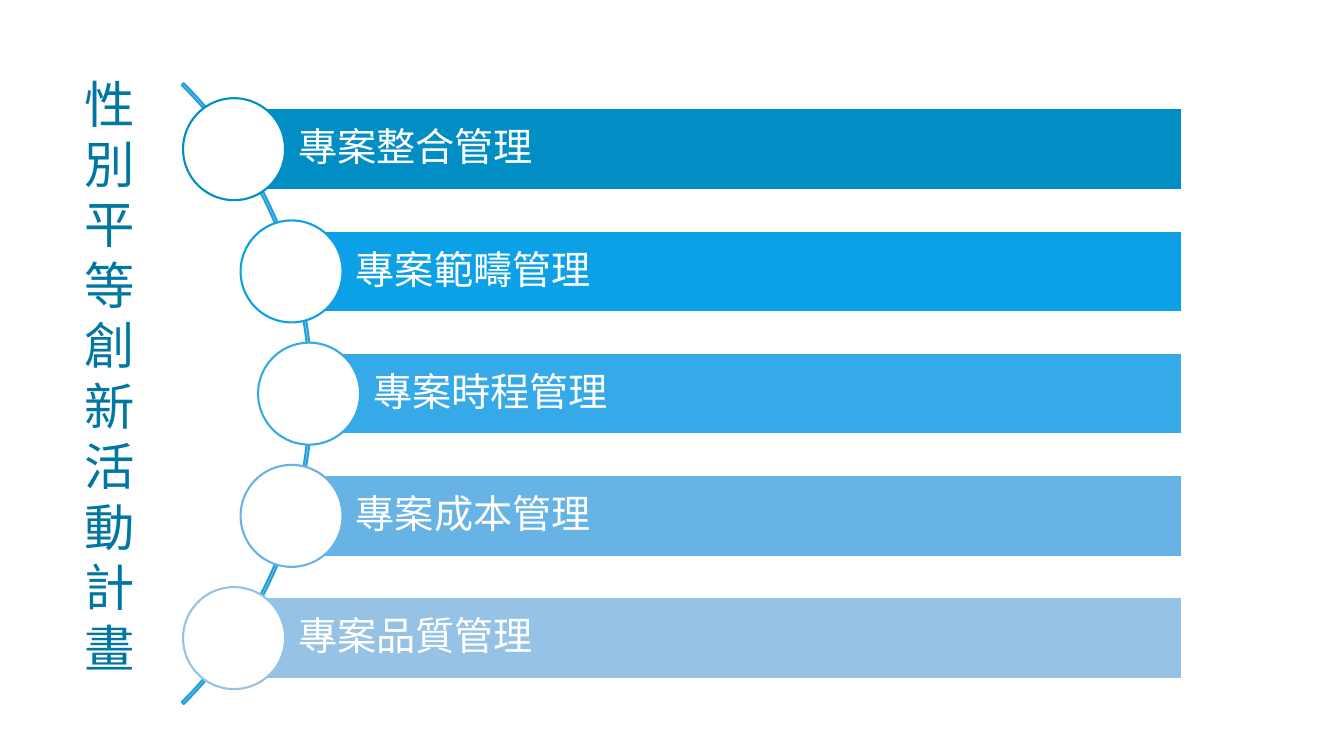
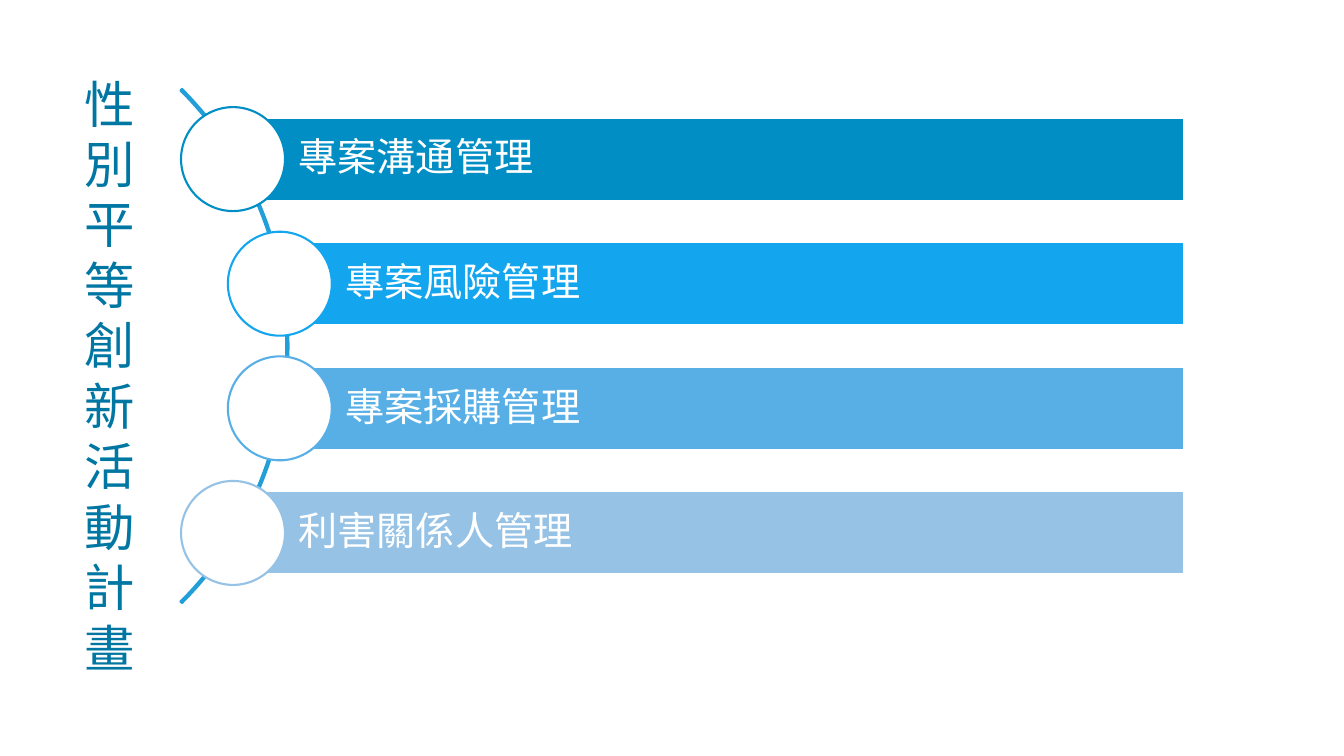
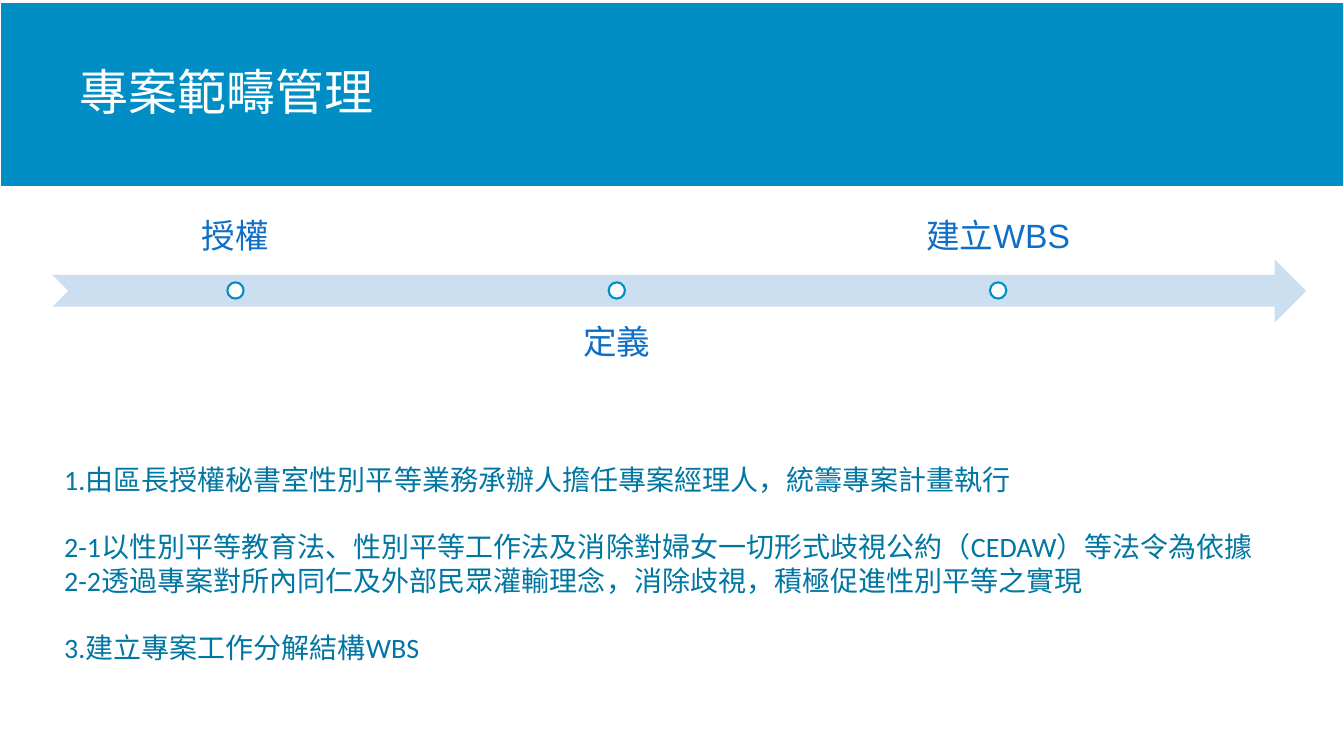
from math import sqrt

from lxml.etree import SubElement
from pptx import Presentation
from pptx.dml.color import RGBColor
from pptx.enum.shapes import MSO_SHAPE as Kind
from pptx.enum.text import MSO_ANCHOR as Anchor, MSO_AUTO_SIZE as Fit, PP_ALIGN as Align
from pptx.oxml.ns import qn
from pptx.util import Cm, Pt

WHITE = RGBColor(0xFF, 0xFF, 0xFF)
BLUE = RGBColor(0x00, 0x8E, 0xC5)
DEEP = RGBColor(0x00, 0x76, 0xA3)
CURVE = RGBColor(0x22, 0x9E, 0xD9)
PALE = RGBColor(0xCC, 0xDF, 0xF1)
LABEL = RGBColor(0x0F, 0x6F, 0xC6)
LAST = RGBColor(0x95, 0xC2, 0xE5)

PLAN = "性別平等創新活動計畫"
# Lengths in cm; hub is the centre of the curve.
LISTS = [
    dict(
        hub=(-3.19, 9.92), radius=11.06, pitch=3.08, dot=2.57, right=29.78,
        rows=[
            ("專案整合管理", BLUE),
            ("專案範疇管理", RGBColor(0x0C, 0xA1, 0xE7)),
            ("專案時程管理", RGBColor(0x36, 0xA9, 0xE9)),
            ("專案成本管理", RGBColor(0x68, 0xB3, 0xE5)),
            ("專案品質管理", LAST),
        ],
    ),
    dict(
        hub=(-1.89, 8.72), radius=9.16, pitch=3.14, dot=2.62, right=29.83,
        rows=[
            ("專案溝通管理", BLUE),
            ("專案風險管理", RGBColor(0x13, 0xA6, 0xEF)),
            ("專案採購管理", RGBColor(0x58, 0xAF, 0xE6)),
            ("利害關係人管理", LAST),
        ],
    ),
]
SCOPE = "專案範疇管理"
STEPS = ["授權", "定義", "建立WBS"]
# Text and space before it in points
NOTES = [
    ("1.由區長授權秘書室性別平等業務承辦人擔任專案經理人，統籌專案計畫執行", 0),
    ("2-1以性別平等教育法、性別平等工作法及消除對婦女一切形式歧視公約（CEDAW）等法令為依據", 24),
    ("2-2透過專案對所內同仁及外部民眾灌輸理念，消除歧視，積極促進性別平等之實現", 0),
    ("3.建立專案工作分解結構WBS", 24),
]


def write(shape, rows, size, color, font="Karla", align=Align.LEFT,
          anchor=Anchor.TOP, pads=(0.25, 0.13, 0.25, 0.13), lead=None):
    """Fill a shape with (text, space before) rows, or with one string."""
    frame = shape.text_frame
    frame.word_wrap = True
    frame.auto_size = Fit.NONE
    frame.vertical_anchor = anchor
    (frame.margin_left, frame.margin_top,
     frame.margin_right, frame.margin_bottom) = map(Cm, pads)
    if isinstance(rows, str):
        rows = [(rows, 0)]
    for i, (text, gap) in enumerate(rows):
        para = frame.add_paragraph() if i else frame.paragraphs[0]
        para.alignment = align
        para.space_before = Pt(gap)
        if lead:
            para.line_spacing = lead
        run = para.add_run()
        run.text = text
        run.font.name = font
        run.font.size = Pt(size)
        run.font.color.rgb = color


def place(shape, x, y, w, h):
    shape.left, shape.top, shape.width, shape.height = map(Cm, (x, y, w, h))


def paint(shape, fill=None, line=None):
    if fill is None:
        shape.fill.background()
    else:
        shape.fill.solid()
        shape.fill.fore_color.rgb = fill
    if line is None:
        shape.line.fill.background()
    else:
        shape.line.color.rgb = line
        shape.line.width = Pt(1.5)


def draw(slide, kind, x, y, w, h, fill=None, line=None):
    shape = slide.shapes.add_shape(kind, *map(Cm, (x, y, w, h)))
    shape.shadow.inherit = False
    paint(shape, fill, line)
    return shape


def disc(slide, x, y, size, line):
    """Draw a white circle centred on x, y."""
    draw(slide, Kind.OVAL, x - size / 2, y - size / 2, size, size, WHITE, line)


def shade(run):
    """Give the letters a soft shadow."""
    fx = SubElement(run.font._element, qn("a:effectLst"))
    drop = SubElement(fx, qn("a:outerShdw"), blurRad="50800", dist="38100",
                      dir="5400000", algn="t", rotWithShape="0")
    tint = SubElement(drop, qn("a:prstClr"), val="black")
    SubElement(tint, qn("a:alpha"), val="40000")
    run.font._element.insert(1, fx)


def list_slide(deck, hub, radius, pitch, dot, right, rows):
    slide = deck.slides.add_slide(deck.slide_layouts[5])
    title = slide.shapes.title
    place(title, 1.88, 1.7, 2.06, 16.43)
    write(title, PLAN, 36, DEEP)

    cx, cy = hub
    arc = draw(slide, Kind.BLOCK_ARC, cx - radius, cy - radius,
               2 * radius, 2 * radius, line=CURVE)
    for i, turn in enumerate((189, 27, 0.003)):
        arc.adjustments[i] = turn

    track = radius - 0.08
    high = 0.8 * dot
    for i, (text, color) in enumerate(rows):
        rise = (i - (len(rows) - 1) / 2) * pitch
        x, y = cx + sqrt(track ** 2 - rise ** 2), cy + rise
        bar = draw(slide, Kind.RECTANGLE, x, y - high / 2, right - x, high, color, WHITE)
        write(bar, text, 28, WHITE, anchor=Anchor.MIDDLE, lead=0.9,
              pads=(0.63 * dot, 0.2, 0.2, 0.2))
        disc(slide, x, y, dot, color)


def scope_slide(deck):
    slide = deck.slides.add_slide(deck.slide_layouts[5])
    title = slide.shapes.title
    place(title, 0, 0.05, 33.87, 4.67)
    paint(title, BLUE, WHITE)
    write(title, SCOPE, 35, WHITE, anchor=Anchor.MIDDLE, lead=0.9,
          pads=(2, 0.25, 0.25, 0.25))
    shade(title.text_frame.paragraphs[0].runs[0])

    draw(slide, Kind.NOTCHED_RIGHT_ARROW, 1.32, 6.53, 31.6, 1.6, PALE)
    wide = 9.17
    for i, text in enumerate(STEPS):
        x = 1.35 + 9.61 * i
        below = i % 2
        box = slide.shapes.add_textbox(
            Cm(x), Cm(7.72 if below else 5.33), Cm(wide), Cm(1.6))
        write(box, text, 24, LABEL, font="Arial", align=Align.CENTER, lead=0.9,
              anchor=Anchor.TOP if below else Anchor.BOTTOM, pads=(0.48,) * 4)
        disc(slide, x + wide / 2, 7.32, 0.41, BLUE)

    notes = slide.shapes.add_textbox(Cm(1.37), Cm(11.53), Cm(31.17), Cm(5.59))
    write(notes, NOTES, 20, DEEP, font="Calibri")


def main():
    deck = Presentation()
    deck.slide_width, deck.slide_height = Cm(33.87), Cm(19.05)
    for part in LISTS:
        list_slide(deck, **part)
    scope_slide(deck)
    deck.save("out.pptx")


if __name__ == "__main__":
    main()
